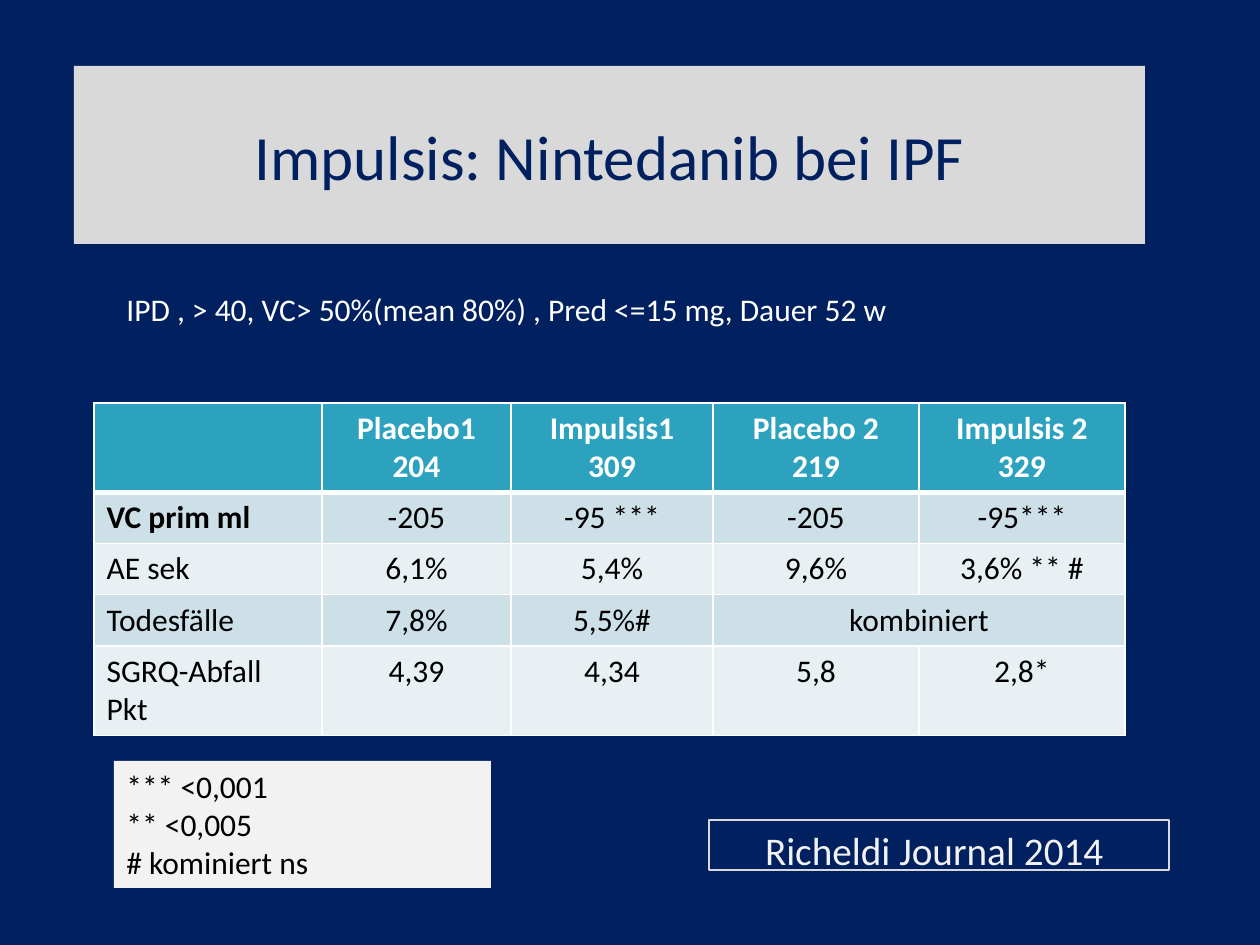
from dataclasses import dataclass

from lxml import etree
from pptx import Presentation, util as u
from pptx.dml.color import RGBColor
from pptx.enum import shapes, text
from pptx.oxml import ns


@dataclass(frozen=True)
class Theme:
    font: str = "Calibri"
    navy: str = "002060"
    gray: str = "D9D9D9"
    pale: str = "F2F2F2"
    white: str = "FFFFFF"
    black: str = "000000"
    teal: str = "2DA2BF"
    bands: tuple = ("CDE0E8", "E8F0F4")
    title: float = 36
    source: float = 22.4
    body: float = 18


T = Theme()
LEFT, MID = text.PP_ALIGN.LEFT, text.PP_ALIGN.CENTER
TOP, CENTER = text.MSO_ANCHOR.TOP, text.MSO_ANCHOR.MIDDLE
COLS = (228, 189, 202, 206, 206)
ROW = 51
ROWS = (
    ("", "Placebo1\n204", "Impulsis1\n309", "Placebo 2\n219", "Impulsis 2\n329"),
    ("VC prim ml", "-205", "-95 ***", "-205", "-95***"),
    ("AE sek", "6,1%", "5,4%", "9,6%", "3,6% ** #"),
    ("Todesfälle", "7,8%", "5,5%#", "kombiniert", ""),
    ("SGRQ-Abfall Pkt", "4,39", "4,34", "5,8", "2,8*"),
)


def px(n):
    return u.Inches(n / 126)


def rgb(tone):
    return RGBColor.from_string(tone)


def write(frame, words, size, tone, align=LEFT, bold=False):
    frame.text = words
    for para in frame.paragraphs:
        para.alignment = align
        para.font.size = u.Pt(size)
        for run in para.runs:
            run.font.name = T.font
            run.font.size = u.Pt(size)
            run.font.bold = bold
            run.font.color.rgb = rgb(tone)


def panel(slide, box, fill=None, line=None, anchor=TOP):
    shape = slide.shapes.add_shape(shapes.MSO_SHAPE.RECTANGLE, *map(px, box))
    shape.shadow.inherit = False
    if fill:
        shape.fill.solid()
        shape.fill.fore_color.rgb = rgb(fill)
    else:
        shape.fill.background()
    if line:
        shape.line.color.rgb = rgb(line)
        shape.line.width = u.Pt(0.75)
    else:
        shape.line.fill.background()
    shape.text_frame.word_wrap = True
    shape.text_frame.vertical_anchor = anchor
    return shape.text_frame


def title(slide, box):
    frame = panel(slide, box, fill=T.gray, anchor=CENTER)
    write(frame, "Impulsis: Nintedanib bei IPF", T.title, T.navy, MID)


def design(slide, box):
    frame = slide.shapes.add_textbox(*map(px, box)).text_frame
    frame.word_wrap = True
    words = "IPD , > 40, VC> 50%(mean 80%) , Pred <=15 mg, Dauer 52 w"
    write(frame, words, T.body, T.white)


def edges(cell, top, base):
    props = cell._tc.get_or_add_tcPr()
    widths = {"L": 1, "R": 1, "T": top, "B": base}
    for spot, (side, width) in enumerate(widths.items()):
        line = etree.Element(ns.qn("a:ln" + side), w=str(u.Pt(width)))
        fill = etree.SubElement(line, ns.qn("a:solidFill"))
        etree.SubElement(fill, ns.qn("a:srgbClr"), val=T.white)
        props.insert(spot, line)


def results(slide, box):
    table = slide.shapes.add_table(len(ROWS), len(COLS), *map(px, box)).table
    for col, width in zip(table.columns, COLS):
        col.width = px(width)
    for r, row in enumerate(ROWS):
        table.rows[r].height = px(ROW)
        head = r == 0
        for c, words in enumerate(row):
            cell = table.cell(r, c)
            cell.fill.solid()
            cell.fill.fore_color.rgb = rgb(T.teal if head else T.bands[(r - 1) % 2])
            edges(cell, 3 if r == 1 else 1, 3 if head else 1)
            write(cell.text_frame, words, T.body, T.white if head else T.black,
                  MID if c else LEFT, head or (r == 1 and c == 0))
    table.cell(3, 3).merge(table.cell(3, 4))


def legend(slide, box):
    frame = panel(slide, box, fill=T.pale)
    write(frame, "*** <0,001\n** <0,005\n# kominiert ns", T.body, T.black)


def source(slide, box):
    frame = panel(slide, box, line=T.gray)
    write(frame, "Richeldi Journal 2014 ", T.source, T.pale, MID)
    frame.paragraphs[0].space_before = u.Pt(4.5)


def main():
    deck = Presentation()
    deck.slide_width, deck.slide_height = px(1260), px(945)
    slide = deck.slides.add_slide(deck.slide_layouts[6])
    slide.background.fill.solid()
    slide.background.fill.fore_color.rgb = rgb(T.navy)
    title(slide, (74, 66, 1071, 178))
    source(slide, (709, 820, 460, 50))
    results(slide, (94, 403, sum(COLS), ROW * len(ROWS)))
    design(slide, (114, 284, 953, 51))
    legend(slide, (114, 761, 377, 127))
    deck.save("out.pptx")


if __name__ == "__main__":
    main()
